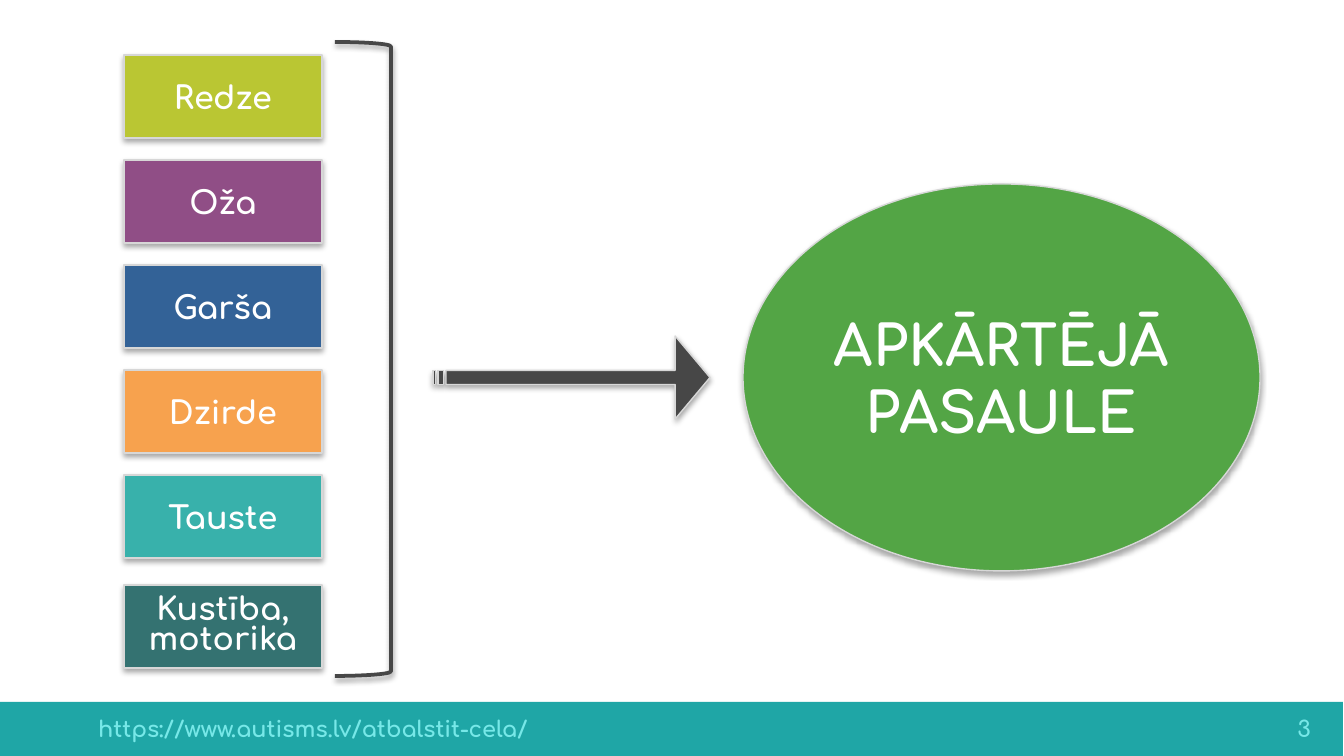
from lxml.etree import SubElement
from pptx import Presentation
from pptx.dml.color import RGBColor
from pptx.enum.shapes import MSO_SHAPE as Shape
from pptx.enum.text import MSO_ANCHOR as Anchor, PP_ALIGN as Align
from pptx.oxml.ns import qn
from pptx.util import Pt

EMU_PER_PX = 914400 / 134.4


def px(length):
    return round(length * EMU_PER_PX)


def color(value):
    return RGBColor.from_string(value)


class SensesSlide:
    """Holds the style and the current slide, and draws each kind of element."""

    FONT = "Comfortaa"
    WHITE = "FFFFFF"
    DARK = "474747"
    EDGE = "D7D7D7"
    TEAL = "1FA6A6"
    AQUA = "77E8E8"

    def __init__(self, presentation):
        self.slide = presentation.slides.add_slide(presentation.slide_layouts[6])

    def add_text(self, frame, lines, size, ink, align, margin, spacing=None):
        frame.word_wrap = True
        frame.vertical_anchor = Anchor.MIDDLE
        frame.margin_left = frame.margin_right = Pt(7.2)
        frame.margin_top = frame.margin_bottom = Pt(margin)
        for index, line in enumerate(lines):
            paragraph = frame.add_paragraph() if index else frame.paragraphs[0]
            paragraph.alignment = align
            if spacing:
                paragraph.line_spacing = spacing
            run = paragraph.add_run()
            run.text = line
            run.font.name = self.FONT
            run.font.size = Pt(size)
            run.font.bold = True
            run.font.color.rgb = color(ink)

    def shadow(self, shape, opacity, distance):
        effects = shape._element.spPr.find(qn("a:effectLst"))
        outer = SubElement(effects, qn("a:outerShdw"), blurRad=str(Pt(3.1)),
                           dist=str(Pt(distance)), dir="5400000", rotWithShape="0")
        black = SubElement(outer, qn("a:srgbClr"), val="000000")
        SubElement(black, qn("a:alpha"), val=str(opacity * 1000))

    def shape(self, kind, box, fill=None, line=None, weight=0.75, adjustments=()):
        shape = self.slide.shapes.add_shape(kind, *map(px, box))
        shape.shadow.inherit = False
        for index, value in enumerate(adjustments):
            shape.adjustments[index] = value
        if fill:
            shape.fill.solid()
            shape.fill.fore_color.rgb = color(fill)
        else:
            shape.fill.background()
        if line:
            shape.line.color.rgb = color(line)
            shape.line.width = Pt(weight)
        else:
            shape.line.fill.background()
        return shape

    def block(self, kind, box, fill, lines=(), size=17, spacing=None, adjustments=()):
        shape = self.shape(kind, box, fill, self.EDGE, adjustments=adjustments)
        self.shadow(shape, 35, 1.8)
        if lines:
            self.add_text(shape.text_frame, lines, size, self.WHITE, Align.CENTER, 3.6, spacing)

    def bracket(self, box):
        shape = self.shape(Shape.RIGHT_BRACKET, box, None, self.DARK, 2, [0.08])
        self.shadow(shape, 37, 1.6)

    def bar(self, box):
        self.shape(Shape.RECTANGLE, box, self.TEAL)

    def label(self, box, text, align):
        frame = self.slide.shapes.add_textbox(*map(px, box)).text_frame
        self.add_text(frame, [text], 12, self.AQUA, align, 7.2)


def main():
    presentation = Presentation()
    presentation.slide_width = px(1344)
    presentation.slide_height = px(756)
    page = SensesSlide(presentation)

    page.bar((-1, 702, 1344, 54))
    page.label((85, 702, 507, 54), "https://www.autisms.lv/atbalstit-cela/", Align.LEFT)

    senses = [("Redze", "BAC633"), ("Oža", "904E86"), ("Garša", "336297"),
              ("Dzirde", "F7A24E"), ("Tauste", "38B1AB")]
    for row, (sense, fill) in enumerate(senses):
        page.block(Shape.RECTANGLE, (124, 55 + 105 * row, 198, 83), fill, [sense])

    page.block(Shape.STRIPED_RIGHT_ARROW, (433, 336, 277, 83), page.DARK,
               adjustments=[0.17, 0.42])
    page.block(Shape.OVAL, (743, 184, 517, 387), "53A545", ["APKĀRTĒJĀ", "PASAULE"], 30)
    page.bracket((335, 42, 56, 634))
    page.block(Shape.RECTANGLE, (124, 585, 198, 83), "347271", ["Kustība, motorika"],
               spacing=0.8)
    page.label((1243, 700, 81, 58), "3", Align.RIGHT)
    presentation.save("out.pptx")


if __name__ == "__main__":
    main()
